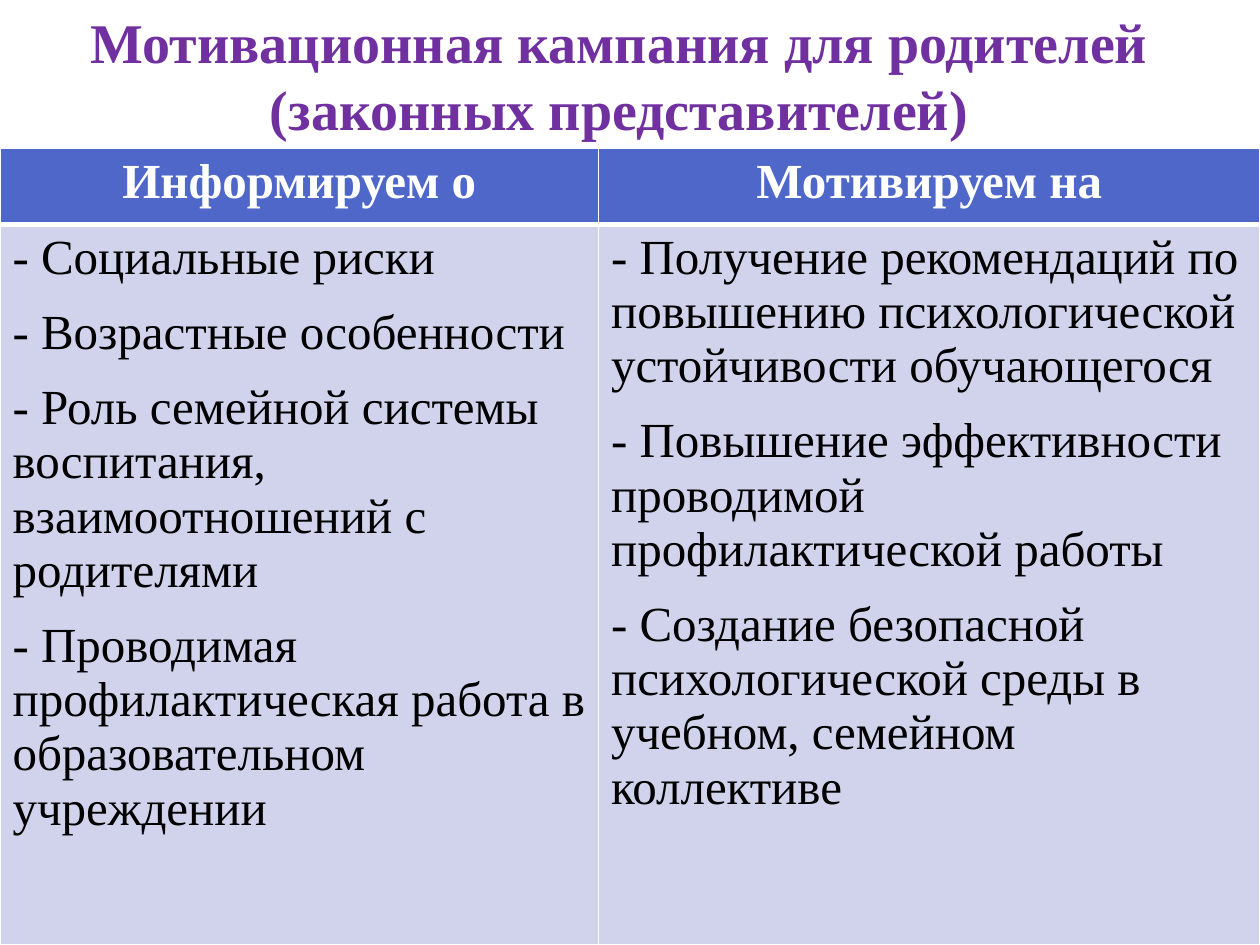
from lxml import etree
from pptx import Presentation
from pptx.dml.color import RGBColor
from pptx.enum.text import MSO_ANCHOR as Anchor, MSO_AUTO_SIZE as Fit, PP_ALIGN as Align
from pptx.oxml.ns import qn
from pptx.util import Inches, Pt

FONT = "Times New Roman"
WHITE = RGBColor(0xFF, 0xFF, 0xFF)
BLACK = RGBColor(0, 0, 0)
PURPLE = RGBColor(0x70, 0x30, 0xA0)
BLUE = RGBColor(0x4E, 0x67, 0xC8)
PALE = RGBColor(0xD0, 0xD3, 0xEB)

TITLE = "Мотивационная кампания для родителей (законных представителей)"
COLUMNS = [
    (4.75, "Информируем о", [
        "- Социальные риски",
        "- Возрастные особенности",
        "- Роль семейной системы воспитания, взаимоотношений с родителями",
        "- Проводимая профилактическая работа в образовательном учреждении",
    ]),
    (5.25, "Мотивируем на", [
        "- Получение рекомендаций по повышению психологической устойчивости обучающегося",
        "- Повышение эффективности проводимой профилактической работы",
        "- Создание безопасной психологической среды в учебном, семейном коллективе",
    ]),
]
ROWS = [0.6, 5.72]


def write(frame, lines, size, color, bold, align, after=0):
    for i, line in enumerate(lines):
        para = frame.add_paragraph() if i else frame.paragraphs[0]
        para.alignment = align
        para.space_before = Pt(0)
        para.space_after = Pt(after)
        para.line_spacing = 1.0
        run = para.add_run()
        run.text = line
        run.font.name = FONT
        run.font.size = Pt(size)
        run.font.bold = bold
        run.font.color.rgb = color


def add_title(slide):
    title = slide.shapes.title
    title.left, title.top = Inches(0.29), Inches(0)
    title.width, title.height = Inches(9.25), Inches(1.18)
    frame = title.text_frame
    frame.word_wrap = True
    frame.auto_size = Fit.SHAPE_TO_FIT_TEXT
    frame.vertical_anchor = Anchor.MIDDLE
    write(frame, [TITLE], 32, PURPLE, True, Align.CENTER)


def set_edges(cell, widths):
    props = cell._tc.get_or_add_tcPr()
    for i, (side, width) in enumerate(zip("LRTB", widths)):
        line = etree.Element(qn(f"a:ln{side}"), w=str(Pt(width)))
        fill = etree.SubElement(line, qn("a:solidFill"))
        etree.SubElement(fill, qn("a:srgbClr"), val=str(WHITE))
        props.insert(i, line)


def fill_cell(cell, color, edges):
    cell.fill.solid()
    cell.fill.fore_color.rgb = color
    set_edges(cell, edges)


def add_grid(slide):
    table = slide.shapes.add_table(
        len(ROWS), len(COLUMNS), Inches(0), Inches(1.18), Inches(10), Inches(sum(ROWS))
    ).table
    for row, height in zip(table.rows, ROWS):
        row.height = Inches(height)
    for i, (width, head, items) in enumerate(COLUMNS):
        table.columns[i].width = Inches(width)
        top, body = table.cell(0, i), table.cell(1, i)
        fill_cell(top, BLUE, (1, 1, 1, 3))
        fill_cell(body, PALE, (1, 1, 3, 1))
        write(top.text_frame, [head], 28, WHITE, True, Align.CENTER)
        write(body.text_frame, items, 28, BLACK, False, Align.LEFT, 12)


def main():
    deck = Presentation()
    deck.slide_width, deck.slide_height = Inches(10), Inches(7.5)
    slide = deck.slides.add_slide(deck.slide_layouts[5])
    add_grid(slide)
    add_title(slide)
    deck.save("out.pptx")


if __name__ == "__main__":
    main()
